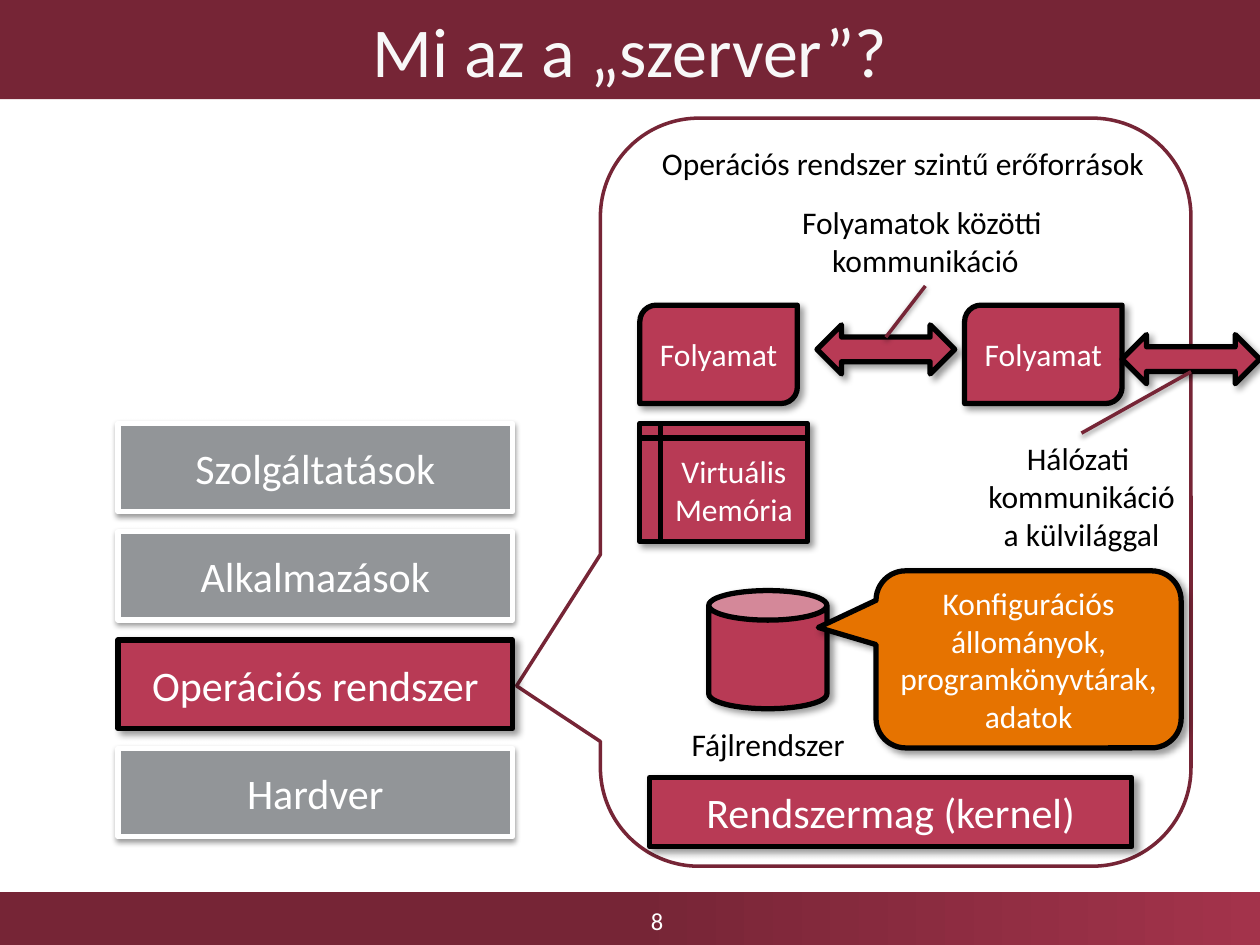
from lxml import etree
from pptx import Presentation
from pptx.dml.color import RGBColor
from pptx.enum import shapes, text
from pptx.oxml.ns import qn
from pptx.util import Pt

FONT = "Calibri"
COLORS = {
    "wine": "762536", "wine_light": "A3334B", "red": "B83A55", "gray": "929598",
    "orange": "E67300", "black": "000000", "white": "FFFFFF", "title": "F8F8F8",
}
# Shadows: opacity %, blur, distance, angle
DEEP_SHADOW = (40, 4, 3, 45)
SOFT_SHADOW = (38, 3.1, 1.6, 90)
KIND = shapes.MSO_SHAPE

# Content: boxes are left, top, width, height in points
TITLE = "Mi az a „szerver”?"
PAGE_NUMBER = "8"
LAYERS = ["Szolgáltatások", "Alkalmazások", "Operációs rendszer", "Hardver"]
ACTIVE_LAYER = "Operációs rendszer"
LAYER_LEFT, LAYER_TOP, LAYER_PITCH = 67.5, 241.9, 61.9
LAYER_WIDTH, LAYER_HEIGHT = 225.4, 50.6

RESOURCES = [  # kind, box, paragraphs, text size
    (KIND.CAN, (405, 337.5, 67.5, 67.5), [], 18),
    (KIND.ROUND_2_DIAG_RECTANGLE, (365.6, 174.4, 90, 56.2), ["Folyamat"], 18),
    (KIND.ROUND_2_DIAG_RECTANGLE, (551.2, 174.4, 90, 56.2), ["Folyamat"], 18),
    (KIND.FLOWCHART_INTERNAL_STORAGE, (365.6, 241.9, 95.6, 67.5),
     ["Virtuális", "Memória"], 18),
    (KIND.LEFT_RIGHT_ARROW, (466.9, 185.6, 78.7, 28.1), [], 18),
    (KIND.LEFT_RIGHT_ARROW, (641.2, 191.2, 78.7, 28.1), [], 18),
    (KIND.RECTANGLE, (371.2, 444.4, 275.6, 39.4), ["Rendszermag (kernel)"], 24),
]
LABELS = [  # box, paragraphs, alignment
    ((371.2, 78.7, 293, 29.1), ["Operációs rendszer szintű erőforrások"], "LEFT"),
    ((388.1, 410.6, 103, 29.1), ["Fájlrendszer"], "LEFT"),
    ((450, 112.5, 157.7, 50.9), ["Folyamatok közötti \vkommunikáció"], "CENTER"),
    ((556.9, 247.5, 122.4, 72.7),
     ["Hálózati \vkommunikáció", "a külvilággal"], "CENTER"),
]
LEADERS = [(528.8, 163.4, 506.2, 192.7), (618, 247.5, 680.6, 212.4)]
CONFIGURATION = ["Konfigurációs állományok,\vprogramkönyvtárak, adatok"]


def rgb(name):
    return RGBColor.from_string(COLORS[name])


def write(shape, paragraphs, size=18, color="black", align="CENTER",
          anchor="MIDDLE", wrap=True):
    frame = shape.text_frame
    frame.word_wrap = wrap
    frame.vertical_anchor = getattr(text.MSO_ANCHOR, anchor)
    for index, content in enumerate(paragraphs):
        paragraph = frame.add_paragraph() if index else frame.paragraphs[0]
        paragraph.text = content
        paragraph.alignment = getattr(text.PP_ALIGN, align)
        for run in paragraph.runs:
            run.font.name = FONT
            run.font.size = Pt(size)
            run.font.color.rgb = rgb(color)


def add_shadow(effects, shadow):
    opacity, blur, distance, angle = shadow
    outer = etree.SubElement(
        effects, qn("a:outerShdw"), blurRad=str(Pt(blur)), dist=str(Pt(distance)),
        dir=str(angle * 60000), algn="ctr", rotWithShape="0")
    color = etree.SubElement(outer, qn("a:srgbClr"), val=COLORS["black"])
    etree.SubElement(color, qn("a:alpha"), val=str(opacity * 1000))


def add_box(slide, kind, box, fill, line=None, width=3, shadow=None, adjust=()):
    shape = slide.shapes.add_shape(kind, *map(Pt, box))
    for index, value in enumerate(adjust):
        shape.adjustments[index] = value
    shape.fill.solid()
    shape.fill.fore_color.rgb = rgb(fill)
    if line:
        shape.line.color.rgb = rgb(line)
        shape.line.width = Pt(width)
    else:
        shape.line.fill.background()
    shape.shadow.inherit = False
    if shadow:
        add_shadow(shape._element.spPr.find(qn("a:effectLst")), shadow)
    return shape


def add_label(slide, box, paragraphs, **options):
    write(slide.shapes.add_textbox(*map(Pt, box)), paragraphs, **options)


def add_leader(slide, ends):
    connector = slide.shapes.add_connector(
        shapes.MSO_CONNECTOR.STRAIGHT, *map(Pt, ends))
    connector.line.color.rgb = rgb("wine")
    connector.line.width = Pt(2)
    effects = etree.SubElement(connector._element.spPr, qn("a:effectLst"))
    add_shadow(effects, SOFT_SHADOW)


def main():
    presentation = Presentation()
    presentation.slide_width, presentation.slide_height = Pt(720), Pt(540)
    slide = presentation.slides.add_slide(presentation.slide_layouts[6])

    # Footer and title bars
    footer = add_box(slide, KIND.RECTANGLE, (0, 509.8, 720, 30.2), "wine")
    footer.fill.gradient()
    footer.fill.gradient_angle = 0
    for stop, position, color in zip(
            footer.fill.gradient_stops, (0.5, 1), ("wine", "wine_light")):
        stop.position = position
        stop.color.rgb = rgb(color)
    add_label(slide, (258.5, 512, 234, 28), [PAGE_NUMBER], size=14, color="white")
    title = add_box(slide, KIND.RECTANGLE, (0, 0, 720, 56.7), "wine")
    write(title, [TITLE], size=40, color="title")

    # Callout opening from the operating system layer
    add_box(slide, KIND.ROUNDED_RECTANGULAR_CALLOUT, (343.1, 67.5, 337.5, 427.5),
            "white", "wine", width=2, adjust=(-0.642, 0.259, 0.167))

    # Stack of server layers
    for index, name in enumerate(LAYERS):
        look = (("red", "black", 3, DEEP_SHADOW) if name == ACTIVE_LAYER
                else ("gray", "white", 3, SOFT_SHADOW))
        top = LAYER_TOP + index * LAYER_PITCH
        layer = add_box(slide, KIND.RECTANGLE,
                        (LAYER_LEFT, top, LAYER_WIDTH, LAYER_HEIGHT), *look)
        write(layer, [name], size=24, color="white")

    # Operating system resources
    for kind, box, paragraphs, size in RESOURCES:
        resource = add_box(slide, kind, box, "red", "black", shadow=DEEP_SHADOW)
        write(resource, paragraphs, size=size, color="white")

    # Labels and their leader lines
    for box, paragraphs, align in LABELS:
        add_label(slide, box, paragraphs, align=align, anchor="TOP", wrap=False)
    for ends in LEADERS:
        add_leader(slide, ends)

    # File system callout
    callout = add_box(slide, KIND.ROUNDED_RECTANGULAR_CALLOUT,
                      (500.6, 326.2, 174.4, 101.2), "orange", "black",
                      shadow=DEEP_SHADOW, adjust=(-0.689, -0.18, 0.167))
    write(callout, CONFIGURATION, color="white")

    presentation.save("out.pptx")


if __name__ == "__main__":
    main()
